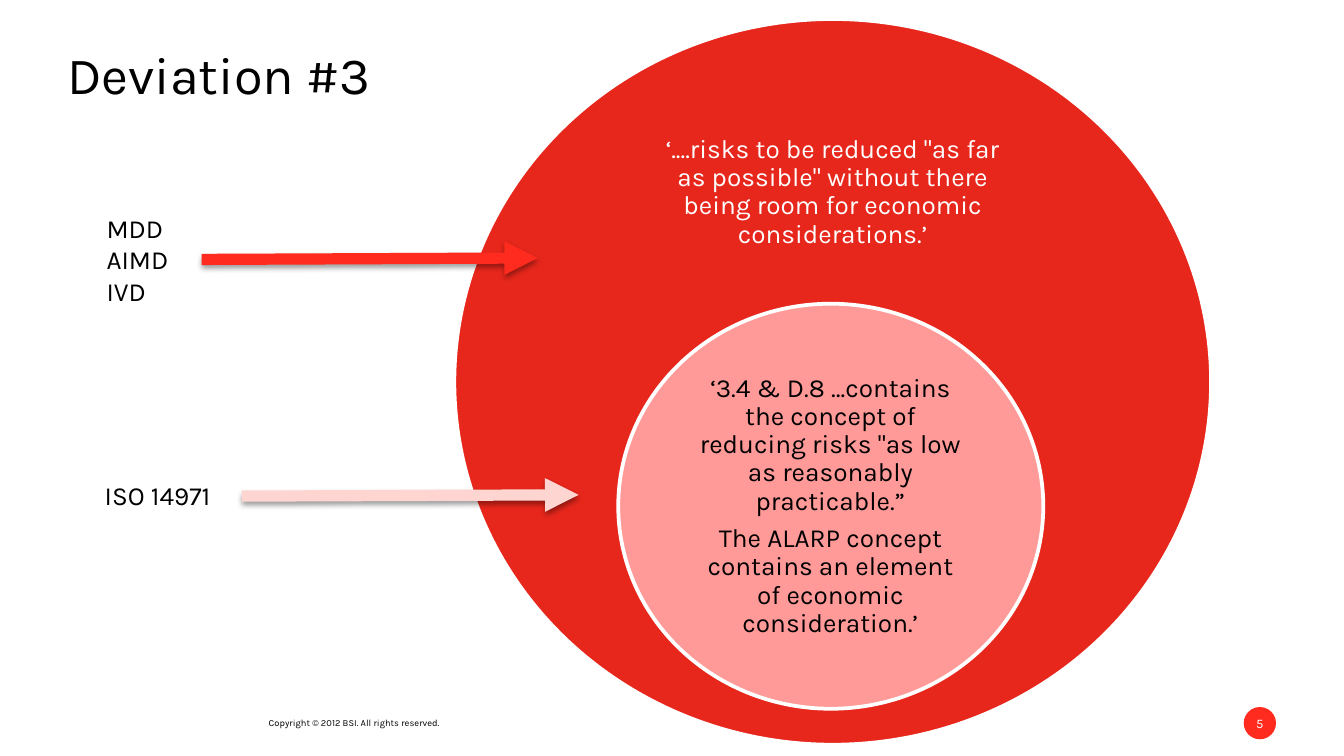
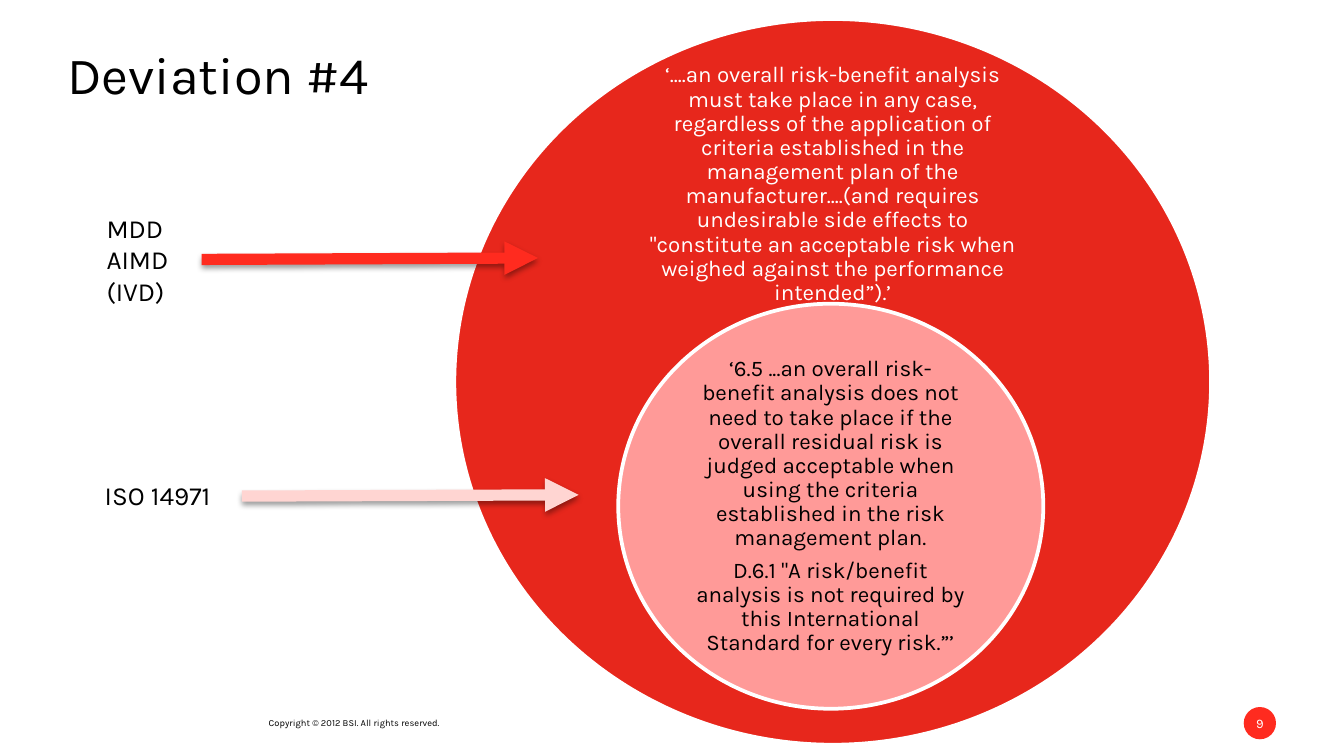
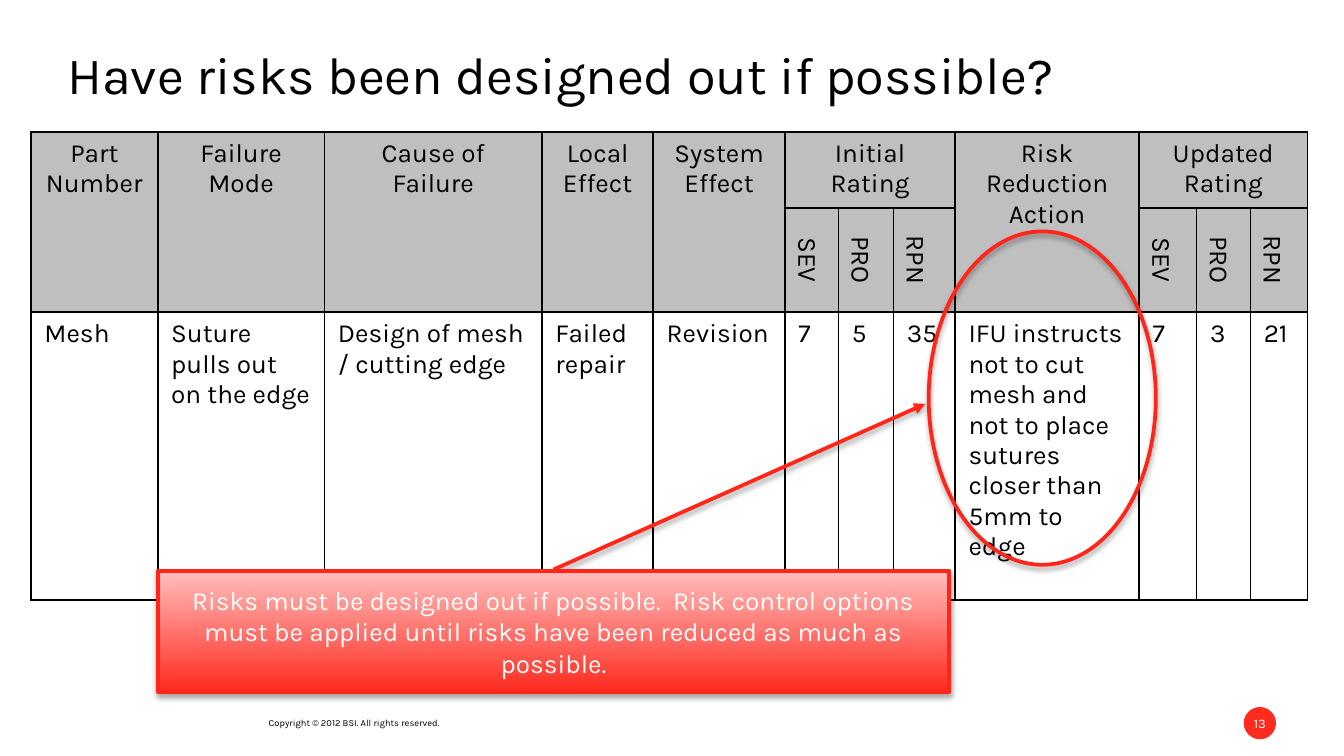
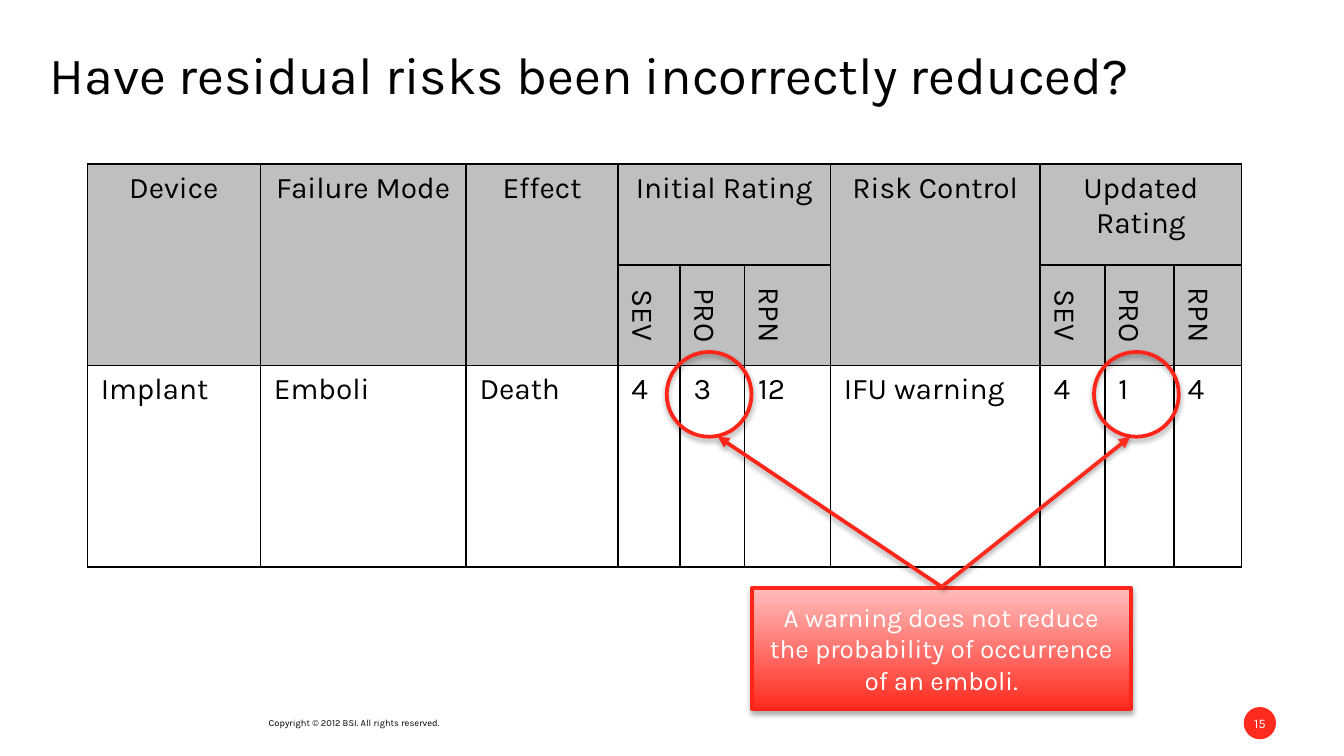
from typing import NamedTuple

from lxml.etree import SubElement as Sub
from pptx import Presentation
from pptx.dml.color import RGBColor
from pptx.enum.shapes import MSO_CONNECTOR as Link, MSO_SHAPE as Form
from pptx.enum.text import MSO_ANCHOR as Anchor, MSO_AUTO_SIZE as Auto, PP_ALIGN as Align
from pptx.oxml.ns import qn
from pptx.util import Pt

FONT = "Karla"
BLACK = RGBColor(0x00, 0x00, 0x00)
WHITE = RGBColor(0xFF, 0xFF, 0xFF)
RED = RGBColor(0xFF, 0x2B, 0x1F)
EDGE = RGBColor(0xFF, 0x25, 0x19)
DISC = RGBColor(0xE7, 0x27, 0x1C)
PINK = RGBColor(0xFF, 0x9A, 0x98)
PALE = RGBColor(0xFF, 0xD5, 0xD2)
BLUSH = RGBColor(0xFF, 0xBE, 0xBD)
GREY = RGBColor(0xBF, 0xBF, 0xBF)
COPY = "Copyright © 2012 BSI. All rights reserved."
MARKS = ("SEV", "PRO", "RPN")


class Box(NamedTuple):
    """A frame in points."""

    x: float
    y: float
    w: float
    h: float

    def pts(self) -> tuple:
        """Return the frame as lengths."""
        return tuple(Pt(n) for n in self)


class Arrow(NamedTuple):
    """A straight arrow from a start to a tip."""

    x: float
    y: float
    tipx: float
    tipy: float
    color: RGBColor
    width: float


class Duel(NamedTuple):
    """A slide that sets directives against the standard."""

    title: str
    page: int
    size: float
    depth: float
    acts: list[str]
    outer: str
    inner: list[str]


class Head(NamedTuple):
    """A table heading, wide when it spans the ratings."""

    text: str
    wide: bool = False


class Grid(NamedTuple):
    """A risk table."""

    x: float
    y: float
    size: float
    cols: list[float]
    rows: list[float]
    heads: list[Head]
    body: list[str]


class Note(NamedTuple):
    """A callout with its pointer settings."""

    box: Box
    text: str
    bends: tuple[float, ...]


class Case(NamedTuple):
    """A slide with a risk table, rings and a callout."""

    title: str
    page: int
    left: float
    grid: Grid
    rings: list[Box]
    note: Note
    arrows: list[Arrow]


OUTER = Box(243.4, 10.2, 405.4, 388.8)
INNER = Box(331.2, 162.7, 227.7, 217)
ARROWS = [
    Arrow(129.6, 265.8, 310, 265.1, PALE, 6),
    Arrow(108, 139, 288.2, 138.2, RED, 6),
]

DUELS = [
    Duel(
        "Deviation #3", 5, 14, 127, ["MDD", "AIMD", "IVD"],
        "‘....risks to be reduced \"as far as possible\" without there being room "
        "for economic considerations.’",
        [
            "‘3.4 & D.8 …contains the concept of reducing risks \"as low as "
            "reasonably practicable.”",
            "The ALARP concept contains an element of economic consideration.’",
        ],
    ),
    Duel(
        "Deviation #4", 9, 12, 118.4, ["MDD", "AIMD", "(IVD)"],
        "‘....an overall risk-benefit analysis must take place in any case, "
        "regardless of the application of criteria established in the management "
        "plan of the manufacturer....(and requires undesirable side effects to "
        "\"constitute an acceptable risk when weighed against the performance "
        "intended”).’",
        [
            "‘6.5 ...an overall risk-benefit analysis does not need to take place "
            "if the overall residual risk is judged acceptable when using the "
            "criteria established in the risk management plan.",
            "D.6.1 \"A risk/benefit analysis is not required by this International "
            "Standard for every risk.”’",
        ],
    ),
]

CASES = [
    Case(
        "Have risks been designed out if possible?", 13, 36,
        Grid(
            16.6, 70.6, 14,
            [67.9, 89.3, 116.6, 59.6, 70.6, 28.6, 29.5, 33.1, 98.6, 30.8, 28.8, 30.6],
            [40.7, 34.6, 154.3],
            [
                Head("Part Number"), Head("Failure Mode"), Head("Cause of Failure"),
                Head("Local Effect"), Head("System Effect"),
                Head("Initial Rating", True), Head("Risk Reduction Action"),
                Head("Updated Rating", True),
            ],
            [
                "Mesh", "Suture pulls out on the edge", "Design of mesh / cutting edge",
                "Failed repair", "Revision", "7", "5", "35",
                "IFU instructs not to cut mesh and not to place sutures closer than "
                "5mm to edge",
                "7", "3", "21",
            ],
        ),
        [Box(497.5, 124, 121.7, 178.6)],
        Note(
            Box(84.6, 305.8, 423.8, 64.8),
            "Risks must be designed out if possible.  Risk control options must be "
            "applied until risks have been reduced as much as possible.",
            (-0.01, 0.5, -1.38, 0.97),
        ),
        [],
    ),
    Case(
        "Have residual risks been incorrectly reduced?", 15, 26.6,
        Grid(
            46.8, 87.9, 16,
            [92.7, 110.2, 81.4, 33.3, 34.6, 45.9, 112.5, 34.6, 37.2, 36],
            [54, 54, 108],
            [
                Head("Device"), Head("Failure Mode"), Head("Effect"),
                Head("Initial Rating", True), Head("Risk Control"),
                Head("Updated Rating", True),
            ],
            ["Implant", "Emboli", "Death", "4", "3", "12", "IFU warning", "4", "1", "4"],
        ),
        [Box(x, 188.6, 45.4, 45.4) for x in (357.2, 586.1)],
        Note(
            Box(402.8, 314.9, 203, 64.8),
            "A warning does not reduce the probability of occurrence of an emboli.",
            (-0.01, 0.5, -1.25, -0.09),
        ),
        [Arrow(504.2, 314.6, 605.5, 234, RED, 2)],
    ),
]


def write(frame, lines: list[str], size: float, color=BLACK, align=Align.LEFT) -> None:
    """Fill a text frame and format its runs."""
    frame.text = "\n".join(lines)
    for para in frame.paragraphs:
        para.alignment = align
        for run in para.runs:
            run.font.name = FONT
            run.font.size = Pt(size)
            run.font.color.rgb = color


def inset(frame, gap: float) -> None:
    """Set all four margins of a text frame."""
    frame.margin_left = frame.margin_right = Pt(gap)
    frame.margin_top = frame.margin_bottom = Pt(gap)


def label(slide, box: Box, lines: list[str], size: float, gap=None, wrap=True, grow=False):
    """Add a text box."""
    frame = slide.shapes.add_textbox(*box.pts()).text_frame
    frame.word_wrap = wrap
    if gap is not None:
        inset(frame, gap)
    if grow:
        frame.auto_size = Auto.SHAPE_TO_FIT_TEXT
    write(frame, lines, size)
    return frame


def shade(shape, alpha: int, dist: float) -> None:
    """Give a shape a soft shadow that falls straight down."""
    props = shape._element.spPr
    effects = props.find(qn("a:effectLst"))
    if effects is None:
        effects = Sub(props, qn("a:effectLst"))
    drop = Sub(
        effects, qn("a:outerShdw"), blurRad=str(Pt(3.1)), dist=str(Pt(dist)),
        dir="5400000", rotWithShape="0",
    )
    tint = Sub(drop, qn("a:srgbClr"), val=str(BLACK))
    Sub(tint, qn("a:alpha"), val=str(alpha * 1000))


def point(shape) -> None:
    """Put an arrowhead at the end of a line."""
    Sub(shape.line._get_or_add_ln(), qn("a:tailEnd"), type="triangle")


def form(slide, kind, box: Box, fill=None, edge=None):
    """Add a preset shape with a plain fill and a line of two points."""
    shape = slide.shapes.add_shape(kind, *box.pts())
    shape.shadow.inherit = False
    if fill is None:
        shape.fill.background()
    else:
        shape.fill.solid()
        shape.fill.fore_color.rgb = fill
    if edge is None:
        shape.line.fill.background()
    else:
        shape.line.color.rgb = edge
        shape.line.width = Pt(2)
    return shape


def draw(slide, arrow: Arrow) -> None:
    """Add an arrow with its shadow."""
    ends = (Pt(n) for n in arrow[:4])
    line = slide.shapes.add_connector(Link.STRAIGHT, *ends)
    line.line.color.rgb = arrow.color
    line.line.width = Pt(arrow.width)
    point(line)
    shade(line, 38, 1.6)


def start(deck, title: str, page: int, left: float = 36):
    """Add a slide with its footer, page badge and title."""
    slide = deck.slides.add_slide(deck.slide_layouts[6])
    label(slide, Box(144, 384.1, 96.5, 6.5), [COPY], 5, 0, grow=True)
    badge = form(slide, Form.OVAL, Box(666.3, 378.8, 17.3, 17.3), RED).text_frame
    inset(badge, 0)
    badge.vertical_anchor = Anchor.MIDDLE
    write(badge, [str(page)], 7, WHITE, Align.CENTER)
    label(slide, Box(left, 22.6, 720 - 2 * left, 28.1), [title], 28, 0)
    return slide


def quote(slide, box: Box, lines: list[str], size: float, color: RGBColor) -> None:
    """Add a centred quotation."""
    frame = label(slide, box, lines, size, size * 0.6)
    frame.vertical_anchor = Anchor.MIDDLE
    write(frame, lines, size, color, Align.CENTER)
    for para in frame.paragraphs:
        para.line_spacing = 0.9
        para.space_after = Pt(size * 0.35)


def contrast(deck, duel: Duel) -> None:
    """Build a slide with nested circles."""
    slide = start(deck, duel.title, duel.page)
    form(slide, Form.OVAL, OUTER, DISC, WHITE)
    quote(slide, Box(339.6, 39.6, 213.1, duel.depth), [duel.outer], duel.size, WHITE)
    form(slide, Form.OVAL, INNER, PINK, WHITE)
    quote(slide, Box(364.3, 216.9, 161.3, 108.7), duel.inner, duel.size, BLACK)
    label(slide, Box(49, 253.4, 80.6, 24.5), ["ISO 14971"], 14, wrap=False, grow=True)
    label(slide, Box(50, 110.2, 49, 58.3), duel.acts, 14, wrap=False, grow=True)
    for arrow in ARROWS:
        draw(slide, arrow)


def frame_cell(cell, fill=None) -> None:
    """Give a cell thin black borders and its fill."""
    props = cell._tc.get_or_add_tcPr()
    for side in ("lnL", "lnR", "lnT", "lnB"):
        line = Sub(props, qn(f"a:{side}"), w=str(Pt(1)))
        Sub(Sub(line, qn("a:solidFill")), qn("a:srgbClr"), val=str(BLACK))
    if fill is None:
        cell.fill.background()
    else:
        cell.fill.solid()
        cell.fill.fore_color.rgb = fill


def tabulate(slide, grid: Grid) -> None:
    """Add a risk table with merged headings."""
    area = Box(grid.x, grid.y, sum(grid.cols), sum(grid.rows))
    table = slide.shapes.add_table(len(grid.rows), len(grid.cols), *area.pts()).table
    table.first_row = table.horz_banding = False
    for col, width in zip(table.columns, grid.cols):
        col.width = Pt(width)
    for row, height in zip(table.rows, grid.rows):
        row.height = Pt(height)
    for r in range(len(grid.rows)):
        for c in range(len(grid.cols)):
            frame_cell(table.cell(r, c), GREY if r < 2 else None)
    c = 0
    for head in grid.heads:
        cell = table.cell(0, c)
        write(cell.text_frame, [head.text], grid.size, align=Align.CENTER)
        if head.wide:
            cell.merge(table.cell(0, c + 2))
            for n, mark in enumerate(MARKS):
                sub = table.cell(1, c + n)
                write(sub.text_frame, [mark], grid.size, align=Align.CENTER)
                sub.vertical_anchor = Anchor.MIDDLE
                sub._tc.get_or_add_tcPr().set("vert", "vert")
        else:
            cell.merge(table.cell(1, c))
            cell.margin_bottom = Pt(1.6)
        c += 3 if head.wide else 1
    for c, text in enumerate(grid.body):
        write(table.cell(2, c).text_frame, [text], grid.size)


def call(slide, note: Note) -> None:
    """Add a callout with a gradient and a pointer."""
    shape = form(slide, Form.LINE_CALLOUT_1, note.box, RED, EDGE)
    for n, bend in enumerate(note.bends):
        shape.adjustments[n] = bend
    shape.fill.gradient()
    shape.fill.gradient_angle = 90
    for stop, color in zip(shape.fill.gradient_stops, (RED, BLUSH)):
        stop.color.rgb = color
    point(shape)
    shade(shape, 35, 1.8)
    shape.text_frame.vertical_anchor = Anchor.MIDDLE
    write(shape.text_frame, [note.text], 14, WHITE, Align.CENTER)


def review(deck, case: Case) -> None:
    """Build a slide with a risk table."""
    slide = start(deck, case.title, case.page, case.left)
    tabulate(slide, case.grid)
    for ring in case.rings:
        shade(form(slide, Form.OVAL, ring, edge=EDGE), 35, 1.8)
    call(slide, case.note)
    for arrow in case.arrows:
        draw(slide, arrow)


def main() -> None:
    """Build the deck and save it."""
    deck = Presentation()
    deck.slide_width, deck.slide_height = Pt(720), Pt(405)
    for duel in DUELS:
        contrast(deck, duel)
    for case in CASES:
        review(deck, case)
    deck.save("out.pptx")


if __name__ == "__main__":
    main()
